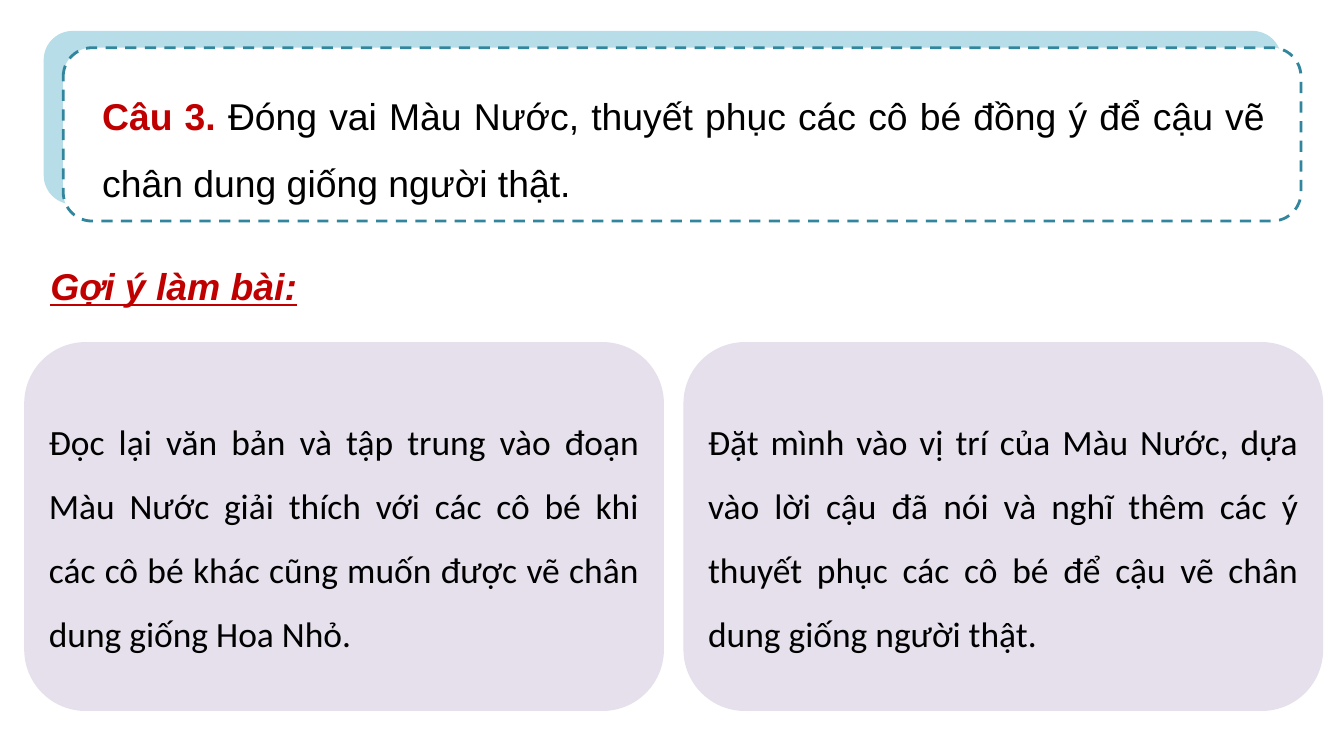
from pptx import Presentation
from pptx.dml.color import RGBColor
from pptx.enum.dml import MSO_LINE
from pptx.enum.shapes import MSO_SHAPE
from pptx.enum.text import MSO_ANCHOR, MSO_AUTO_SIZE, PP_ALIGN
from pptx.util import Inches, Pt

ROUND = MSO_SHAPE.ROUNDED_RECTANGLE
DASH = MSO_LINE.DASH
TOP, MIDDLE = MSO_ANCHOR.TOP, MSO_ANCHOR.MIDDLE
JUSTIFY = PP_ALIGN.JUSTIFY
NO_FIT = MSO_AUTO_SIZE.NONE

COLORS = {
    "sky": "B7DEE8",
    "teal": "31859C",
    "white": "FFFFFF",
    "lilac": "E6E0EC",
    "red": "C00000",
    "black": "000000",
}

prs = Presentation()
prs.slide_width = Inches(20)
prs.slide_height = Inches(11.25)
slide = prs.slides.add_slide(prs.slide_layouts[5])
shapes = slide.shapes


def add_box(left, top, width, height, fill):
    """Add a rounded rectangle without outline or shadow."""
    box = shapes.add_shape(ROUND, Inches(left), Inches(top), Inches(width), Inches(height))
    box.shadow.inherit = False
    box.fill.solid()
    box.fill.fore_color.rgb = RGBColor.from_string(COLORS[fill])
    box.line.fill.background()
    return box


def write(shape, anchor, runs):
    """Fill a shape with one justified paragraph of (text, font, size, color, bold) runs."""
    frame = shape.text_frame
    frame.word_wrap = True
    frame.auto_size = NO_FIT
    frame.vertical_anchor = anchor
    para = frame.paragraphs[0]
    para.alignment = JUSTIFY
    para.line_spacing = 1.5
    for text, name, size, color, bold in runs:
        run = para.add_run()
        run.text = text
        run.font.name = name
        run.font.size = Pt(size)
        run.font.bold = bold
        run.font.color.rgb = RGBColor.from_string(COLORS[color])
    return para


# Question panel
add_box(0.65, 0.46, 18.42, 2.58, "sky")
panel = add_box(0.94, 0.71, 18.42, 2.58, "white")
panel.line.color.rgb = RGBColor.from_string(COLORS["teal"])
panel.line.width = Pt(3)
panel.line.dash_style = DASH

# The title goes in front of its panel
title = shapes.title
title.left, title.top = Inches(1.42), Inches(1)
title.width, title.height = Inches(17.5), Inches(2)
panel._element.addnext(title._element)
write(title, TOP, [
    ("Câu 3. ", "Arial", 40, "red", True),
    ("Đóng vai Màu Nước, thuyết phục các cô bé đồng ý để cậu vẽ chân dung "
     "giống người thật.", "Arial", 40, "black", False),
])

# Hint heading
hint = shapes.add_textbox(Inches(0.65), Inches(3.54), Inches(3.92), Inches(0.99))
para = write(hint, TOP, [("Gợi ý làm bài:", "Arial", 40, "red", True)])
para.runs[0].font.italic = True
para.runs[0].font.underline = True

# Hint cards
hints = [
    "Đọc lại văn bản và tập trung vào đoạn Màu Nước giải thích với các cô bé khi "
    "các cô bé khác cũng muốn được vẽ chân dung giống Hoa Nhỏ.",
    "Đặt mình vào vị trí của Màu Nước, dựa vào lời cậu đã nói và nghĩ thêm các ý "
    "thuyết phục các cô bé để cậu vẽ chân dung giống người thật.",
]
for i, text in enumerate(hints):
    card = add_box(0.36 + i * 9.81, 5.09, 9.52, 5.49, "lilac")
    write(card, MIDDLE, [(text, "Calibri", 38, "black", False)])

prs.save("out.pptx")
